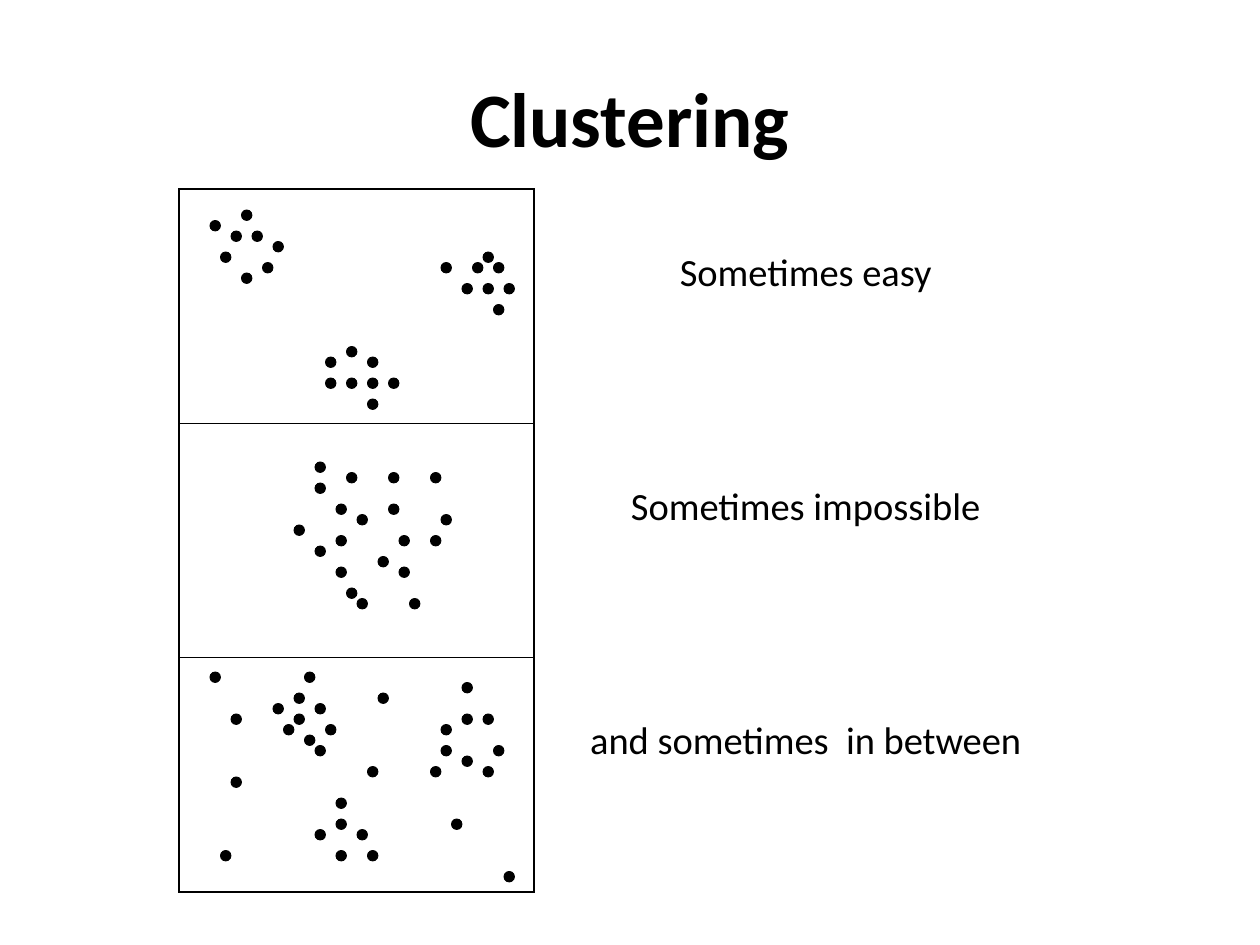
"""Build the Clustering slide: three scatter panels, each with its verdict."""
from dataclasses import dataclass

from lxml import etree
from pptx import Presentation
from pptx import util as u
from pptx.dml import color
from pptx.enum import shapes, text
from pptx.oxml import ns

PANELS = [
    ("Sometimes easy", [
        (20, 21), (23, 20), (22, 22), (24, 22), (26, 23), (21, 24), (25, 25), (23, 26),
        (46, 24), (42, 25), (45, 25), (47, 25), (44, 27), (46, 27), (48, 27), (47, 29),
        (33, 33), (31, 34), (35, 34), (31, 36), (33, 36), (35, 36), (37, 36), (35, 38),
    ]),
    ("Sometimes impossible", [
        (30, 44), (33, 45), (37, 45), (41, 45), (30, 46), (32, 48), (37, 48),
        (34, 49), (42, 49), (28, 50), (32, 51), (38, 51), (41, 51), (30, 52),
        (36, 53), (32, 54), (38, 54), (33, 56), (34, 57), (39, 57),
    ]),
    ("and sometimes  in between", [
        (20, 64), (29, 64), (44, 65), (28, 66), (36, 66), (26, 67), (30, 67), (22, 68),
        (28, 68), (44, 68), (46, 68), (27, 69), (31, 69), (42, 69), (29, 70), (30, 71),
        (42, 71), (47, 71), (44, 72), (35, 73), (41, 73), (46, 73), (22, 74), (32, 76),
        (32, 78), (43, 78), (30, 79), (34, 79), (21, 81), (32, 81), (35, 81), (48, 83),
    ]),
]
GRID = u.Inches(1) / 12
COLUMN_WIDTHS = (2.82, 4.31)
ROW_HEIGHT = 1.86


@dataclass(frozen=True)
class Theme:
    ink: color.RGBColor = color.RGBColor(0, 0, 0)
    font: str = "Calibri"
    title_size: u.Pt = u.Pt(44)
    verdict_size: u.Pt = u.Pt(22)
    border: u.Pt = u.Pt(1)
    dot_line: u.Pt = u.Pt(0.5)


THEME = Theme()


def style(paragraph, size, bold=False):
    paragraph.alignment = text.PP_ALIGN.CENTER
    font = paragraph.font
    font.name, font.size, font.bold = THEME.font, size, bold
    font.color.rgb = THEME.ink


def set_borders(cell, visible):
    properties = cell._tc.get_or_add_tcPr()
    for side in "LRTB":
        line = etree.SubElement(properties, ns.qn(f"a:ln{side}"), w=str(THEME.border))
        if side in visible:
            fill = etree.SubElement(line, ns.qn("a:solidFill"))
            etree.SubElement(fill, ns.qn("a:srgbClr"), val=str(THEME.ink))
        else:
            etree.SubElement(line, ns.qn("a:noFill"))
    cell.fill.background()


def add_panels(slide):
    panels = slide.shapes.add_table(
        len(PANELS), len(COLUMN_WIDTHS), u.Inches(1.42), u.Inches(1.5),
        u.Inches(sum(COLUMN_WIDTHS)), u.Inches(ROW_HEIGHT * len(PANELS))).table
    panels.first_row = panels.horz_banding = False
    for column, width in zip(panels.columns, COLUMN_WIDTHS):
        column.width = u.Inches(width)
    for row, (verdict, _) in enumerate(PANELS):
        panels.rows[row].height = u.Inches(ROW_HEIGHT)
        plot, caption = panels.cell(row, 0), panels.cell(row, 1)
        set_borders(plot, "LRTB")
        set_borders(caption, "L")
        caption.margin_top = u.Inches(0.48)
        caption.text = verdict
        style(caption.text_frame.paragraphs[0], THEME.verdict_size)


def add_dot(slide, column, row):
    dot = slide.shapes.add_shape(
        shapes.MSO_SHAPE.OVAL, round(column * GRID), round(row * GRID),
        round(GRID), round(GRID))
    dot.shadow.inherit = False
    dot.fill.solid()
    dot.fill.fore_color.rgb = dot.line.color.rgb = THEME.ink
    dot.line.width = THEME.dot_line


def main():
    deck = Presentation()
    deck.slide_width, deck.slide_height = u.Inches(10), u.Inches(7.5)
    slide = deck.slides.add_slide(deck.slide_layouts[5])
    title = slide.shapes.title
    title.left, title.top = u.Inches(0.5), u.Inches(0.3)
    title.width, title.height = u.Inches(9), u.Inches(1.25)
    title.text_frame.text = "Clustering"
    title.text_frame.vertical_anchor = text.MSO_ANCHOR.MIDDLE
    style(title.text_frame.paragraphs[0], THEME.title_size, bold=True)
    add_panels(slide)
    for _, dots in PANELS:
        for column, row in dots:
            add_dot(slide, column, row)
    deck.save("out.pptx")


if __name__ == "__main__":
    main()
